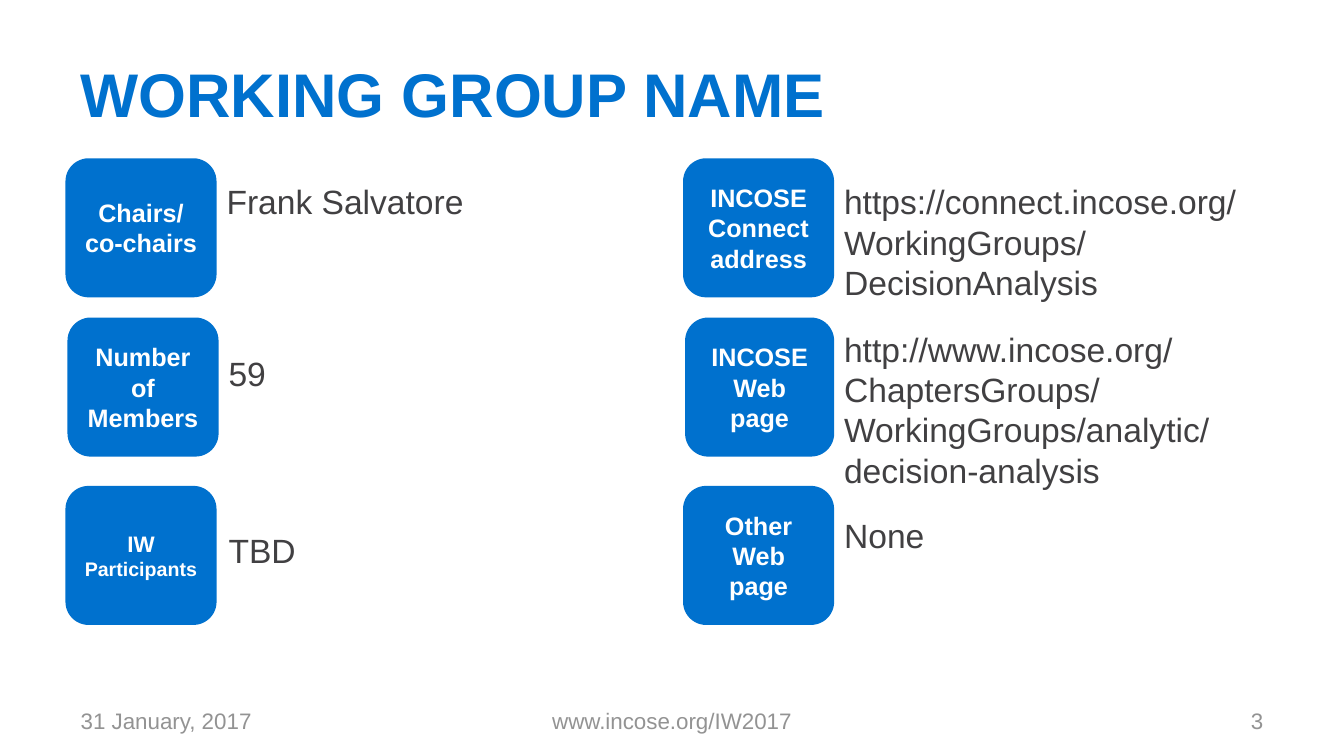
"""Build the working group overview slide."""
import pptx
import pptx.dml.color
import pptx.enum.shapes
import pptx.enum.text
import pptx.util

Inches = pptx.util.Inches
ALIGN = pptx.enum.text.PP_ALIGN
ANCHOR = pptx.enum.text.MSO_ANCHOR
BLUE, WHITE, DARK, GREY = "0071CE", "FFFFFF", "414042", "939393"

TILES = [
    (0.65, 1.57, 1.5, [("Chairs/co-chairs", 18)]),
    (0.67, 3.15, 1.5, [("Number of Members", 18)]),
    (0.65, 4.82, 1.5, [("IW ", 16), ("Participants", 14)]),
    (6.78, 1.57, 1.5, [("INCOSE Connect address", 18)]),
    (6.8, 3.15, 1.48, [("INCOSE Web page", 18)]),
    (6.78, 4.82, 1.5, [("Other Web page", 18)]),
]
DETAILS = [
    (2.15, 1.75, 4.49, 0.5, "Frank Salvatore"),
    (2.17, 3.45, 4.47, 0.5, "59"),
    (2.17, 5.21, 4.49, 0.5, "TBD"),
    (8.28, 1.75, 5.06, 0.91,
     "https://connect.incose.org/WorkingGroups/DecisionAnalysis"),
    (8.28, 3.21, 5.06, 1.31,
     "http://www.incose.org/ChaptersGroups/WorkingGroups/analytic/decision-analysis"),
    (8.28, 5.06, 5.06, 0.5, "None"),
]
FOOTERS = [
    (0.67, 3.11, "31 January, 2017", ALIGN.LEFT),
    (4.56, 4.22, "www.incose.org/IW2017", ALIGN.CENTER),
    (9.56, 3.11, "3", ALIGN.RIGHT),
]


def rgb(value):
    """Return the colour for a hex string."""
    return pptx.dml.color.RGBColor.from_string(value)


def format_run(run, size, color, bold=False):
    """Set the font of one run."""
    run.font.name = "Arial"
    run.font.size = pptx.util.Pt(size)
    run.font.bold = bold
    run.font.color.rgb = rgb(color)


def write(shape, text, size, color, bold=False, align=ALIGN.LEFT):
    """Put one formatted paragraph in a shape and return it."""
    shape.text_frame.text = text
    shape.text_frame.word_wrap = True
    paragraph = shape.text_frame.paragraphs[0]
    paragraph.alignment = align
    format_run(paragraph.runs[0], size, color, bold)
    return paragraph


def center_with_wide_margins(text_frame):
    """Anchor text in the middle with the title and footer margins."""
    text_frame.vertical_anchor = ANCHOR.MIDDLE
    text_frame.margin_left = text_frame.margin_right = Inches(0.13)
    text_frame.margin_top = text_frame.margin_bottom = Inches(0.07)


def set_title(slide, text):
    """Place and format the title placeholder."""
    title = slide.shapes.title
    title.left, title.top = Inches(0.67), Inches(0.3)
    title.width, title.height = Inches(12.01), Inches(1.25)
    write(title, text, 44, BLUE, bold=True)
    center_with_wide_margins(title.text_frame)


def add_tile(slide, left, top, width, parts):
    """Add a rounded blue label whose text parts may differ in size."""
    tile = slide.shapes.add_shape(
        pptx.enum.shapes.MSO_SHAPE.ROUNDED_RECTANGLE,
        Inches(left), Inches(top), Inches(width), Inches(1.38))
    tile.shadow.inherit = False
    tile.fill.solid()
    tile.fill.fore_color.rgb = rgb(BLUE)
    tile.line.fill.background()
    tile.text_frame.vertical_anchor = ANCHOR.MIDDLE
    text, size = parts[0]
    paragraph = write(tile, text, size, WHITE, bold=True, align=ALIGN.CENTER)
    for text, size in parts[1:]:
        run = paragraph.add_run()
        run.text = text
        format_run(run, size, WHITE, bold=True)


def add_detail(slide, left, top, width, height, text):
    """Add the text that stands beside a tile."""
    box = slide.shapes.add_textbox(
        Inches(left), Inches(top), Inches(width), Inches(height))
    write(box, text, 24, DARK)
    box.text_frame.auto_size = pptx.enum.text.MSO_AUTO_SIZE.SHAPE_TO_FIT_TEXT


def add_footer(slide, left, width, text, align):
    """Add one part of the footer line."""
    box = slide.shapes.add_textbox(
        Inches(left), Inches(6.95), Inches(width), Inches(0.4))
    write(box, text, 16, GREY, align=align)
    center_with_wide_margins(box.text_frame)


def main():
    """Create the slide and save the presentation."""
    presentation = pptx.Presentation()
    presentation.slide_width = Inches(13.34)
    presentation.slide_height = Inches(7.5)
    slide = presentation.slides.add_slide(presentation.slide_layouts[5])
    set_title(slide, "WORKING GROUP NAME")
    for tile in TILES:
        add_tile(slide, *tile)
    for detail in DETAILS:
        add_detail(slide, *detail)
    for footer in FOOTERS:
        add_footer(slide, *footer)
    presentation.save("out.pptx")


if __name__ == "__main__":
    main()
